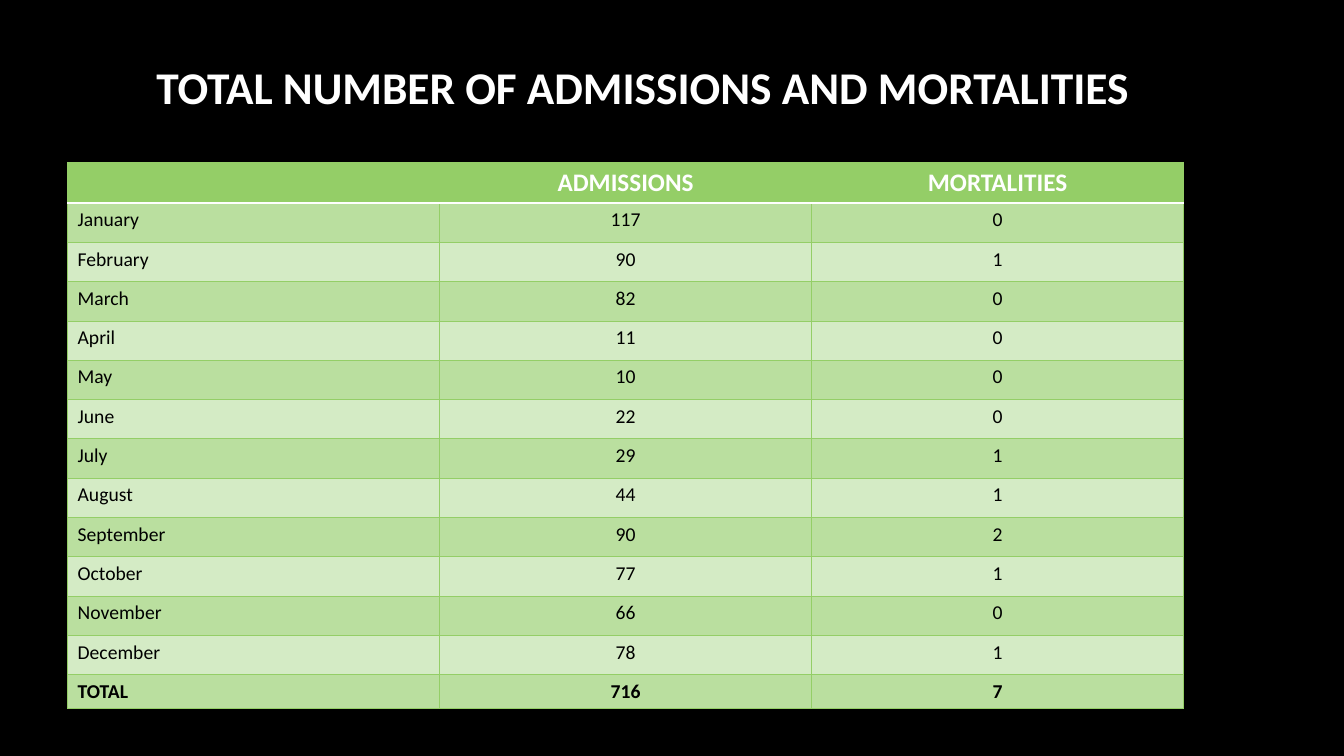
from lxml.etree import SubElement
from pptx import Presentation
from pptx.dml.color import RGBColor
from pptx.enum.text import MSO_ANCHOR, MSO_AUTO_SIZE, PP_ALIGN
from pptx.oxml.ns import qn
from pptx.util import Inches, Pt

FONT = "Calibri"
BLACK, WHITE = "000000", "FFFFFF"
GREEN, BAND_GREEN, PALE_GREEN = "94CE67", "BADF9F", "D4EBC5"

HEADINGS = ("", "ADMISSIONS", "MORTALITIES")
MONTHS = (
    ("January", 117, 0),
    ("February", 90, 1),
    ("March", 82, 0),
    ("April", 11, 0),
    ("May", 10, 0),
    ("June", 22, 0),
    ("July", 29, 1),
    ("August", 44, 1),
    ("September", 90, 2),
    ("October", 77, 1),
    ("November", 66, 0),
    ("December", 78, 1),
)
TOTAL = ("TOTAL", 716, 7)


def color(value):
    return RGBColor.from_string(value)


def add_text(text_frame, text, size, text_color, bold, alignment):
    paragraph = text_frame.paragraphs[0]
    paragraph.alignment = alignment
    run = paragraph.add_run()
    run.text = text
    run.font.name = FONT
    run.font.size = Pt(size)
    run.font.bold = bold
    run.font.color.rgb = color(text_color)


def add_border(cell, side, line_color, width):
    properties = cell._tc.get_or_add_tcPr()
    line = SubElement(properties, qn(f"a:ln{side}"), w=str(Pt(width)))
    fill = SubElement(line, qn("a:solidFill"))
    SubElement(fill, qn("a:srgbClr"), val=line_color)


def format_cell(cell, row, fill_color):
    # A white rule separates the header from the months
    white_side = {0: "B", 1: "T"}.get(row)
    for side in "LRTB":
        if side == white_side:
            add_border(cell, side, WHITE, 1.5)
        else:
            add_border(cell, side, GREEN, 0.75)
    cell.fill.solid()
    cell.fill.fore_color.rgb = color(fill_color)


def add_title(slide, text):
    title = slide.shapes.title
    title.left, title.top = Inches(1.45), Inches(0.25)
    title.width, title.height = Inches(10.37), Inches(1.22)
    text_frame = title.text_frame
    text_frame.word_wrap = True
    text_frame.auto_size = MSO_AUTO_SIZE.NONE
    text_frame.vertical_anchor = MSO_ANCHOR.MIDDLE
    add_text(text_frame, text, 32.4, WHITE, True, PP_ALIGN.LEFT)


def add_monthly_table(slide):
    records = (HEADINGS, *MONTHS, TOTAL)
    last_row = len(records) - 1
    table = slide.shapes.add_table(
        len(records), len(HEADINGS),
        Inches(0.67), Inches(1.61), Inches(11.08), Inches(5.43),
    ).table
    for column in table.columns:
        column.width = Inches(3.69)
    for row, record in enumerate(records):
        table.rows[row].height = Inches(0.32 if row == last_row else 0.39)
        is_header = row == 0
        band = BAND_GREEN if row % 2 else PALE_GREEN
        for column, value in enumerate(record):
            cell = table.cell(row, column)
            format_cell(cell, row, GREEN if is_header else band)
            if value != "":
                add_text(
                    cell.text_frame, str(value),
                    18 if is_header else 14,
                    WHITE if is_header else BLACK,
                    row in (0, last_row),
                    PP_ALIGN.CENTER if column else PP_ALIGN.LEFT,
                )


def main():
    presentation = Presentation()
    presentation.slide_width = Inches(13.33)
    presentation.slide_height = Inches(7.5)
    # Title Only layout on a black background
    slide = presentation.slides.add_slide(presentation.slide_layouts[5])
    slide.background.fill.solid()
    slide.background.fill.fore_color.rgb = color(BLACK)
    add_title(slide, "TOTAL NUMBER OF ADMISSIONS AND MORTALITIES")
    add_monthly_table(slide)
    presentation.save("out.pptx")


if __name__ == "__main__":
    main()
